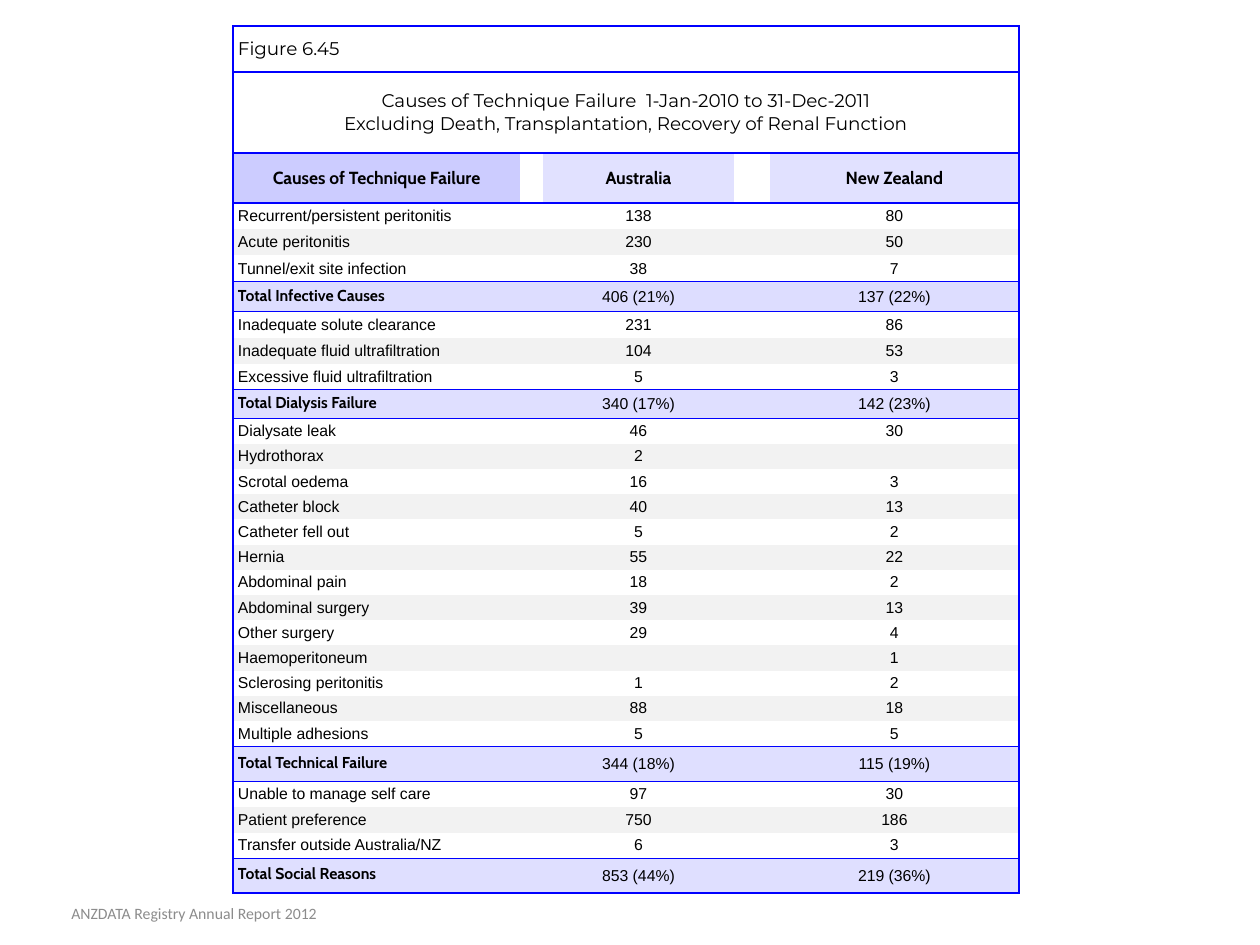
from lxml import etree
from pptx import Presentation
from pptx import util as u
from pptx.dml.color import RGBColor
from pptx.enum import text
from pptx.oxml.ns import qn

PX = u.Inches(1) // 126
BLACK = RGBColor(0x00, 0x00, 0x00)
GREY = RGBColor(0x8C, 0x8C, 0x8C)
BAND = RGBColor(0xF2, 0xF2, 0xF2)
CAUSE_HEAD = RGBColor(0xCC, 0xCC, 0xFF)
COUNTRY_HEAD = RGBColor(0xE1, 0xE1, 0xFF)
INFECTIVE = RGBColor(0xDD, 0xDD, 0xFF)
TOTAL = RGBColor(0xDF, 0xDF, 0xFF)
RULE = RGBColor(0x00, 0x00, 0xFF)

FIGURE = "Figure 6.45"
TITLE = ("Causes of Technique Failure  1-Jan-2010 to 31-Dec-2011\n"
         "Excluding Death, Transplantation, Recovery of Renal Function")
HEADINGS = ("Causes of Technique Failure", "Australia", "New Zealand")
FOOTER = "ANZDATA Registry Annual Report 2012"

SECTIONS = [
    {"causes": [("Recurrent/persistent peritonitis", "138", "80"),
                ("Acute peritonitis", "230", "50"),
                ("Tunnel/exit site infection", "38", "7")],
     "total": ("Total Infective Causes", "406 (21%)", "137 (22%)"),
     "fill": INFECTIVE, "heights": (79, 30)},
    {"causes": [("Inadequate solute clearance", "231", "86"),
                ("Inadequate fluid ultrafiltration", "104", "53"),
                ("Excessive fluid ultrafiltration", "5", "3")],
     "total": ("Total Dialysis Failure", "340 (17%)", "142 (23%)"),
     "fill": TOTAL, "heights": (78, 29)},
    {"causes": [("Dialysate leak", "46", "30"),
                ("Hydrothorax", "2", ""),
                ("Scrotal oedema", "16", "3"),
                ("Catheter block", "40", "13"),
                ("Catheter fell out", "5", "2"),
                ("Hernia", "55", "22"),
                ("Abdominal pain", "18", "2"),
                ("Abdominal surgery", "39", "13"),
                ("Other surgery", "29", "4"),
                ("Haemoperitoneum", "", "1"),
                ("Sclerosing peritonitis", "1", "2"),
                ("Miscellaneous", "88", "18"),
                ("Multiple adhesions", "5", "5")],
     "total": ("Total Technical Failure", "344 (18%)", "115 (19%)"),
     "fill": TOTAL, "heights": (328, 35)},
    {"causes": [("Unable to manage self care", "97", "30"),
                ("Patient preference", "750", "186"),
                ("Transfer outside Australia/NZ", "6", "3")],
     "total": ("Total Social Reasons", "853 (44%)", "219 (36%)"),
     "fill": TOTAL, "heights": (77, 35)},
]

LEFT, TOP = 233, 26
COLUMNS = (287, 23, 191, 36, 249)
HEAD_HEIGHTS = (46, 81, 50)
NO_STYLE = "{2D5ABB26-0587-4C30-8999-92F81FD0307C}"


def write(cell, words, font, size, bold=False, centred=True, spacing=None):
    cell.margin_left = cell.margin_right = 5 * PX
    cell.margin_top = cell.margin_bottom = 2 * PX
    cell.vertical_anchor = text.MSO_ANCHOR.MIDDLE
    cell.text_frame.text = words
    for line in cell.text_frame.paragraphs:
        line.alignment = text.PP_ALIGN.CENTER if centred else text.PP_ALIGN.LEFT
        line.line_spacing = spacing
        for run in line.runs:
            run.font.name, run.font.size, run.font.bold = font, u.Pt(size), bold
            run.font.color.rgb = BLACK
        if not line.runs:
            end = etree.SubElement(line._p, qn("a:endParaRPr"))
            end.set("sz", str(size * 100))


def paint(cell, fill):
    if fill is None:
        cell.fill.background()
    else:
        cell.fill.solid()
        cell.fill.fore_color.rgb = fill


def rule(cell, **widths):
    properties = cell._tc.get_or_add_tcPr()
    for place, side in enumerate("LRTB"):
        width = widths.get(side, 0)
        line = etree.Element(qn(f"a:ln{side}"), w=str(int(u.Pt(width))))
        if width:
            solid = etree.SubElement(line, qn("a:solidFill"))
            etree.SubElement(solid, qn("a:srgbClr"), val=str(RULE))
        else:
            etree.SubElement(line, qn("a:noFill"))
        properties.insert(place, line)


def fill_row(cells, words, fills, above, below, head=False, total=False):
    for column, (cell, fill) in enumerate(zip(cells, fills)):
        label = column == 0
        value = "" if column % 2 else words[column // 2]
        strong = head or (total and label)
        write(cell, value, "Cabin" if strong else "Arial", 10 if head else 9, strong,
              head or not label, 0.75 if total and label else None)
        paint(cell, fill)
        rule(cell, L=label, R=column == len(COLUMNS) - 1, T=above, B=below)


def main():
    deck = Presentation()
    deck.slide_width, deck.slide_height = u.Inches(10), u.Inches(7.5)
    slide = deck.slides.add_slide(deck.slide_layouts[6])

    heights = list(HEAD_HEIGHTS)
    for section in SECTIONS:
        body, total = section["heights"]
        count = len(section["causes"])
        heights += [body / count] * count + [total]

    causes_table = slide.shapes.add_table(
        len(heights), len(COLUMNS), LEFT * PX, TOP * PX,
        sum(COLUMNS) * PX, round(sum(heights) * PX)).table
    causes_table.first_row = causes_table.horz_banding = False
    causes_table._tbl.tblPr.find(qn("a:tableStyleId")).text = NO_STYLE
    for column, width in zip(causes_table.columns, COLUMNS):
        column.width = width * PX
    for row, height in zip(causes_table.rows, heights):
        row.height = round(height * PX)

    rows = [list(row.cells) for row in causes_table.rows]
    for cells, words, centred in zip(rows, (FIGURE, TITLE), (False, True)):
        cells[0].merge(cells[-1])
        write(cells[0], words, "Montserrat", 10.5, centred=centred)
        for cell in cells:
            paint(cell, None)
            rule(cell, L=1, R=1, T=1, B=1)

    fill_row(rows[2], HEADINGS, (CAUSE_HEAD, None, COUNTRY_HEAD, None, COUNTRY_HEAD),
             1, 1, head=True)

    remaining = iter(rows[3:])
    for section in SECTIONS:
        first, last = section is SECTIONS[0], section is SECTIONS[-1]
        final = len(section["causes"]) - 1
        for place, cause in enumerate(section["causes"]):
            above = (1 if first else 0.75) if place == 0 else 0
            below = 0.75 if place == final else 0
            fill = BAND if place % 2 else None
            fill_row(next(remaining), cause, [fill] * len(COLUMNS), above, below)
        fill_row(next(remaining), section["total"], [section["fill"]] * len(COLUMNS),
                 0.75, 1 if last else 0.75, total=True)

    footer = slide.shapes.add_textbox(5 * PX, 888 * PX, 378 * PX, 50 * PX).text_frame
    footer.word_wrap = True
    footer.vertical_anchor = text.MSO_ANCHOR.MIDDLE
    footer.text = FOOTER
    credit = footer.paragraphs[0]
    credit.alignment = text.PP_ALIGN.CENTER
    credit.runs[0].font.name = "Calibri"
    credit.runs[0].font.size = u.Pt(9)
    credit.runs[0].font.color.rgb = GREY

    deck.save("out.pptx")


if __name__ == "__main__":
    main()
